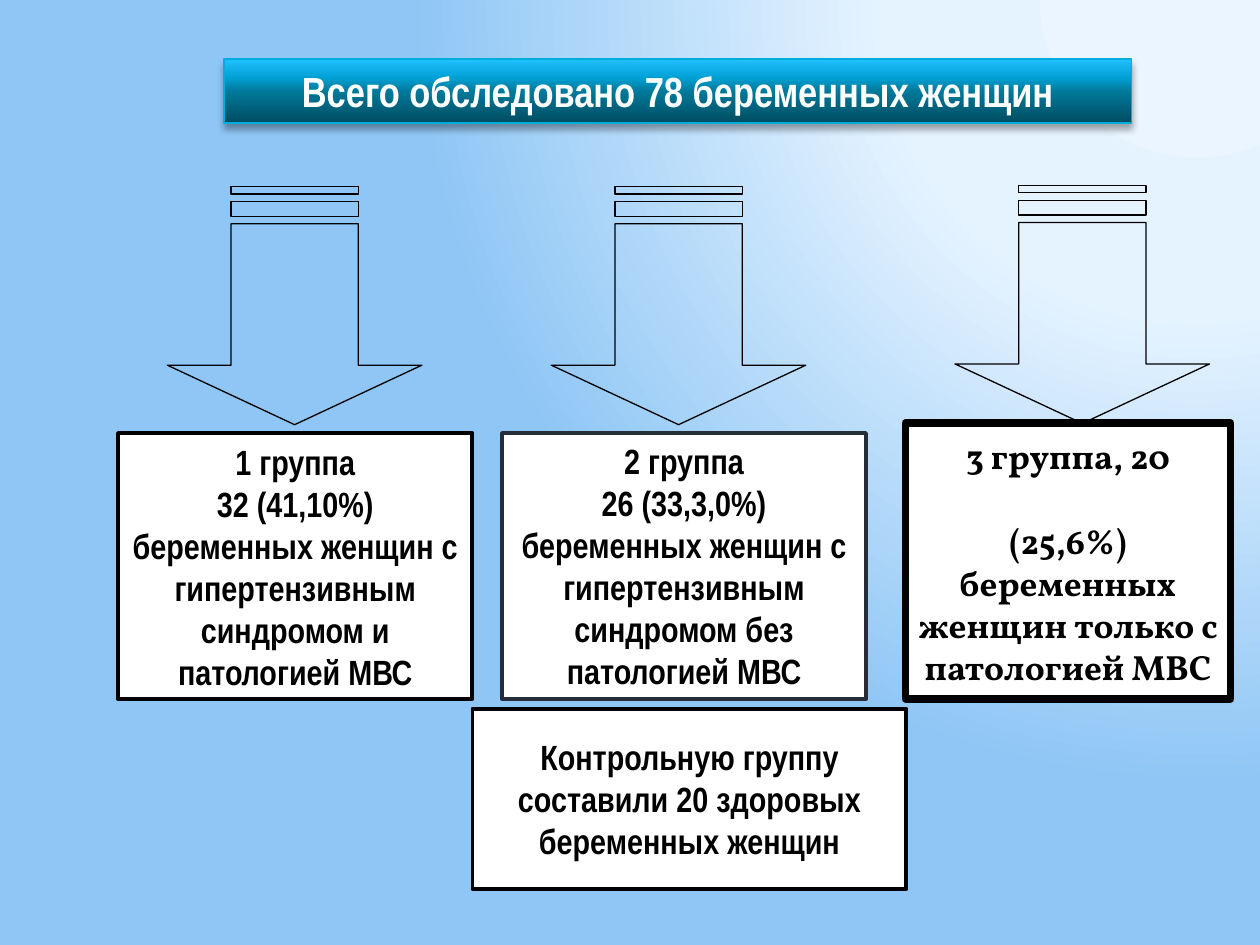
from lxml.etree import SubElement
from pptx import Presentation
from pptx.dml.color import RGBColor
from pptx.enum.shapes import MSO_SHAPE as Geometry
from pptx.enum.text import MSO_ANCHOR as Anchor, PP_ALIGN as Align
from pptx.oxml.ns import qn
from pptx.util import Pt

NARROW, SERIF = "Arial Narrow", "Vollkorn"
BLACK, WHITE = "000000", "FFFFFF"


def color(hex_code):
    return RGBColor.from_string(hex_code)


def add_tag(parent, tag, **attributes):
    return SubElement(parent, qn(tag), {k: str(v) for k, v in attributes.items()})


def set_gradient(owner, stops):
    """Replace the gradient under owner with these stops, leaving its direction open."""
    gradient = owner.find(".//" + qn("a:gradFill"))
    for child in list(gradient):
        gradient.remove(child)
    stop_list = add_tag(gradient, "a:gsLst")
    for percent, hex_code in stops:
        stop = add_tag(stop_list, "a:gs", pos=percent * 1000)
        add_tag(stop, "a:srgbClr", val=hex_code)
    return gradient


def paint_background(slide):
    slide.background.fill.gradient()
    gradient = set_gradient(slide.element,
                            [(0, "EAF5FF"), (40, "E5F3FF"), (100, "8FC6F5")])
    circle = add_tag(gradient, "a:path", path="circle")
    add_tag(circle, "a:fillToRect", l=95000, t=-106000, r=5000, b=206000)


def add_box(slide, box, paragraphs, font=NARROW, size=20, ink=BLACK,
            border=BLACK, border_width=2.25, anchor=Anchor.MIDDLE, gap=0):
    """Bordered white box; gap is the space between its paragraphs."""
    panel = slide.shapes.add_shape(Geometry.RECTANGLE, *map(Pt, box))
    panel.shadow.inherit = False
    panel.fill.solid()
    panel.fill.fore_color.rgb = color(WHITE)
    panel.line.color.rgb = color(border)
    panel.line.width = Pt(border_width)
    frame = panel.text_frame
    frame.word_wrap = True
    frame.vertical_anchor = anchor
    for index, text in enumerate(paragraphs):
        paragraph = frame.add_paragraph() if index else frame.paragraphs[0]
        paragraph.alignment = Align.CENTER
        if index and gap:
            paragraph.space_before = Pt(gap)
        run = paragraph.add_run()
        run.text = text
        run.font.name = font
        run.font.size = Pt(size)
        run.font.bold = True
        run.font.color.rgb = color(ink)
    return panel


def add_title(slide, box, text):
    banner = add_box(slide, box, [text], size=24, ink=WHITE, border="00ADDC",
                     border_width=0.75, anchor=Anchor.TOP)
    banner.fill.gradient()
    properties = banner.element.spPr
    gradient = set_gradient(properties, [(0, "004C60"), (50, "007A9B"),
                                         (70, "009FD3"), (100, "21C0FF")])
    add_tag(gradient, "a:lin", ang=270 * 60000, scaled=0)
    shadow = add_tag(properties.find(qn("a:effectLst")), "a:outerShdw",
                     blurRad=Pt(4), dist=Pt(3), dir=90 * 60000, rotWithShape=0)
    add_tag(add_tag(shadow, "a:srgbClr", val=BLACK), "a:alpha", val=35000)


def add_down_arrow(slide, box):
    """Striped arrow turned to point down, filling the box as seen on the slide."""
    left, top, width, height = box
    shift = (width - height) / 2
    arrow = slide.shapes.add_shape(
        Geometry.STRIPED_RIGHT_ARROW,
        Pt(left + shift), Pt(top - shift), Pt(height), Pt(width))
    arrow.rotation = 90
    arrow.adjustments[0] = 0.5
    arrow.adjustments[1] = 0.25
    arrow.shadow.inherit = False
    arrow.fill.background()
    arrow.line.color.rgb = color(BLACK)
    arrow.line.width = Pt(0.75)


def build_slide(slide):
    paint_background(slide)
    add_title(slide, (128, 33.8, 518.5, 36.5), "Всего обследовано 78 беременных женщин")
    for left, top in ((95.6, 106.7), (315, 106.7), (545.7, 106)):
        add_down_arrow(slide, (left, top, 145.5, 136))
    add_box(slide, (67.5, 247.5, 202.5, 152), [
        "1 группа",
        "32 (41,10%) беременных женщин с гипертензивным синдромом и патологией МВС"])
    add_box(slide, (286.9, 247.5, 208, 152), [
        "2 группа",
        "26 (33,3,0%) беременных женщин с гипертензивным синдромом без патологией МВС"],
        border="272D38", anchor=Anchor.TOP)
    add_box(slide, (517.5, 241.7, 185.7, 157.7), [
        "3 группа, 20",
        "(25,6%) беременных женщин только с патологией МВС"],
        font=SERIF, border_width=4.33, gap=24)
    add_box(slide, (270, 405, 248, 103), [
        "Контрольную группу составили 20 здоровых беременных женщин"])


def main():
    presentation = Presentation()
    presentation.slide_width, presentation.slide_height = Pt(720), Pt(540)
    build_slide(presentation.slides.add_slide(presentation.slide_layouts[6]))
    presentation.save("out.pptx")


if __name__ == "__main__":
    main()
